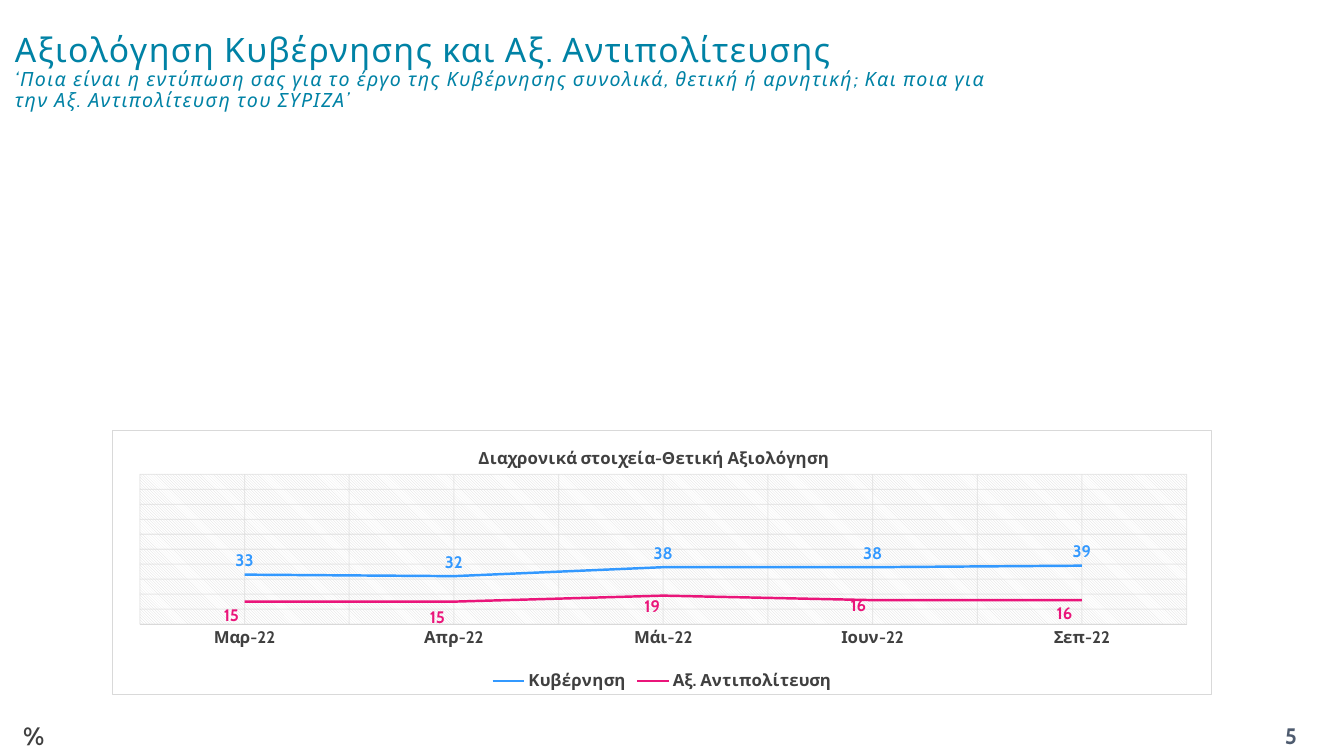
from copy import deepcopy
from dataclasses import dataclass

from lxml import etree
from pptx import Presentation
from pptx.chart.data import CategoryChartData
from pptx.dml.color import RGBColor
from pptx.enum.chart import XL_CHART_TYPE, XL_LABEL_POSITION, XL_LEGEND_POSITION, XL_TICK_MARK
from pptx.enum.dml import MSO_PATTERN
from pptx.enum.text import MSO_ANCHOR, PP_ALIGN
from pptx.oxml import parse_xml
from pptx.oxml.ns import nsdecls, qn
from pptx.util import Pt

LINE_CHART = XL_CHART_TYPE.LINE
ABOVE, BELOW = XL_LABEL_POSITION.ABOVE, XL_LABEL_POSITION.BELOW
LEGEND_BOTTOM = XL_LEGEND_POSITION.BOTTOM
NO_TICKS = XL_TICK_MARK.NONE
DARK_DIAGONAL = MSO_PATTERN.DARK_UPWARD_DIAGONAL
MIDDLE, TOP = MSO_ANCHOR.MIDDLE, MSO_ANCHOR.TOP
LEFT, CENTER = PP_ALIGN.LEFT, PP_ALIGN.CENTER

FONT = "Cabin"
TEAL, SLATE, DARK, GREY, WHITE = "0082A5", "4E5B6F", "404040", "D9D9D9", "FFFFFF"
MONTHS = ["Μαρ-22", "Απρ-22", "Μάι-22", "Ιουν-22", "Σεπ-22"]


@dataclass
class Segment:
    text: str
    font_values: dict


@dataclass
class TextBox:
    place: tuple
    segments: list
    anchor: MSO_ANCHOR = MIDDLE
    align: PP_ALIGN = LEFT
    line_spacing: float = 1.0
    tracking: int = 0


@dataclass
class Trend:
    name: str
    values: list
    color: str
    label_position: XL_LABEL_POSITION
    label_shifts: list


TITLE = TextBox((3.6, 9.4, 714.2, 85), [
    Segment("Αξιολόγηση Κυβέρνησης και Αξ. Αντιπολίτευσης\v", {"size": Pt(24), "color": TEAL}),
    Segment("‘Ποια είναι η εντύπωση σας για το έργο της Κυβέρνησης συνολικά, θετική ή αρνητική; "
            "Και ποια για την Αξ. Αντιπολίτευση του ΣΥΡΙΖΑ’",
            {"size": Pt(14), "italic": True, "color": TEAL}),
], line_spacing=0.9, tracking=100)
PAGE_NUMBER = TextBox((884.2, 511.2, 75.6, 28.8), [
    Segment("5", {"size": Pt(16), "bold": True, "color": SLATE})], align=CENTER)
UNIT = TextBox((9.4, 511.2, 51.1, 28.8), [
    Segment("%", {"size": Pt(18), "bold": True})], anchor=TOP)

TRENDS = [
    Trend("Κυβέρνηση", [33, 32, 38, 38, 39], "3399FF", ABOVE, []),
    Trend("Αξ. Αντιπολίτευση", [15, 15, 19, 16, 16], "EA157A", BELOW,
          [(-0.012, 0), (-0.015, 0.01), (-0.01, -0.01), (-0.013, -0.03), (-0.016, 0)]),
]


def rgb(color: str) -> RGBColor:
    return RGBColor.from_string(color)


def format_font(font, values: dict) -> None:
    for name, value in {"name": FONT, **values}.items():
        if name == "color":
            font.color.rgb = rgb(value)
        else:
            setattr(font, name, value)


def chart_font(font, color: str = DARK) -> None:
    format_font(font, {"size": Pt(12), "bold": True, "color": color})


def add_text(slide, box: TextBox):
    shape = slide.shapes.add_textbox(*map(Pt, box.place))
    frame = shape.text_frame
    frame.word_wrap = True
    frame.vertical_anchor = box.anchor
    paragraph = frame.paragraphs[0]
    paragraph.alignment = box.align
    paragraph.line_spacing = box.line_spacing
    for segment in box.segments:
        run = paragraph.add_run()
        run.text = segment.text.rstrip("\v")
        format_font(run.font, segment.font_values)
        if box.tracking:
            run.font._element.set("spc", str(box.tracking))
        if segment.text.endswith("\v"):
            paragraph.add_line_break()
    return shape


def set_layout(anchor, **values) -> None:
    """Place a chart element by hand; its layout follows the anchor."""
    parent = anchor.getparent()
    for old in parent.findall(qn("c:layout")):
        parent.remove(old)
    entries = "".join(f'<c:{name} val="{value}"/>' for name, value in values.items())
    anchor.addnext(parse_xml(f'<c:layout {nsdecls("c")}><c:manualLayout>{entries}'
                             '</c:manualLayout></c:layout>'))


def shape_properties(content: str):
    return parse_xml(f'<c:spPr {nsdecls("c", "a")}>{content}</c:spPr>')


def solid(color: str) -> str:
    return f'<a:solidFill><a:srgbClr val="{color}"/></a:solidFill>'


def format_grid(axis) -> None:
    axis.has_major_gridlines = True
    line = axis.major_gridlines.format.line
    line.width = Pt(0.75)
    line.color.rgb = rgb(GREY)
    for color in axis._element.find(qn("c:majorGridlines")).iter(qn("a:srgbClr")):
        etree.SubElement(color, qn("a:alpha")).set("val", "54000")


def format_axes(chart) -> None:
    months, values = chart.category_axis, chart.value_axis
    format_grid(months)
    format_grid(values)
    months.has_minor_gridlines = True
    major = months._element.find(qn("c:majorGridlines"))
    minor = months._element.find(qn("c:minorGridlines"))
    minor.append(deepcopy(major[0]))
    months.major_tick_mark = months.minor_tick_mark = NO_TICKS
    months.format.line.width = Pt(0.75)
    months.format.line.color.rgb = rgb(GREY)
    chart_font(months.tick_labels.font)
    values.minimum_scale, values.maximum_scale, values.major_unit = 0, 100, 10
    values.visible = False


def format_trend(series, trend: Trend) -> None:
    series.smooth = False
    series.format.line.width = Pt(1.75)
    series.format.line.color.rgb = rgb(trend.color)
    labels = series.data_labels
    labels.show_value = True
    labels.position = trend.label_position
    chart_font(labels.font, trend.color)
    for index in range(len(trend.label_shifts)):
        label = series.points[index].data_label
        label.position = trend.label_position
        chart_font(label.font, trend.color)
    for element in labels._element.findall(qn("c:dLbl")):
        index = element.find(qn("c:idx"))
        x, y = trend.label_shifts[int(index.get("val"))]
        set_layout(index, x=x, y=y)


def add_trend_chart(slide) -> None:
    data = CategoryChartData()
    data.categories = MONTHS
    for trend in TRENDS:
        data.add_series(trend.name, trend.values)
    place = map(Pt, (79.9, 307.4, 786.2, 189.4))
    chart = slide.shapes.add_chart(LINE_CHART, *place, data).chart
    format_font(chart.font, {"size": Pt(10), "color": "000000"})
    plot = chart.plots[0]
    plot.vary_by_categories = False
    for series, trend in zip(plot.series, TRENDS):
        format_trend(series, trend)
    format_axes(chart)

    # Title and legend
    chart.has_title = True
    frame = chart.chart_title.text_frame
    frame.text = "Διαχρονικά στοιχεία-Θετική Αξιολόγηση"
    chart_font(frame.paragraphs[0].runs[0].font)
    title = chart.chart_title._element
    set_layout(title.find(qn("c:tx")), xMode="edge", yMode="edge", x=0.33, y=0.05)
    chart.has_legend = True
    chart.legend.position = LEGEND_BOTTOM
    chart.legend.include_in_layout = False
    chart_font(chart.legend.font)

    # Hatched plot area inside a bordered white frame
    area = plot._element.getparent()
    set_layout(plot._element, layoutTarget="inner", xMode="edge", yMode="edge",
               x=0.025, y=0.165, w=0.952, h=0.567)
    area.insert(0, area.find(qn("c:layout")))
    area.append(shape_properties(
        f'<a:pattFill prst="ltDnDiag"><a:fgClr><a:srgbClr val="{GREY}"/></a:fgClr>'
        f'<a:bgClr><a:srgbClr val="{WHITE}"/></a:bgClr></a:pattFill>'))
    area.getparent().addnext(shape_properties(
        f'{solid(WHITE)}<a:ln w="{Pt(0.75)}">{solid(GREY)}</a:ln>'))


def main() -> None:
    presentation = Presentation()
    presentation.slide_width, presentation.slide_height = Pt(960), Pt(540)
    slide = presentation.slides.add_slide(presentation.slide_layouts[6])
    add_text(slide, TITLE)
    add_text(slide, PAGE_NUMBER)
    unit = add_text(slide, UNIT)
    fill = unit.text_frame.paragraphs[0].runs[0].font.fill
    fill.patterned()
    fill.pattern = DARK_DIAGONAL
    fill.fore_color.rgb, fill.back_color.rgb = rgb("808080"), rgb(DARK)
    add_trend_chart(slide)
    presentation.save("out.pptx")


if __name__ == "__main__":
    main()
